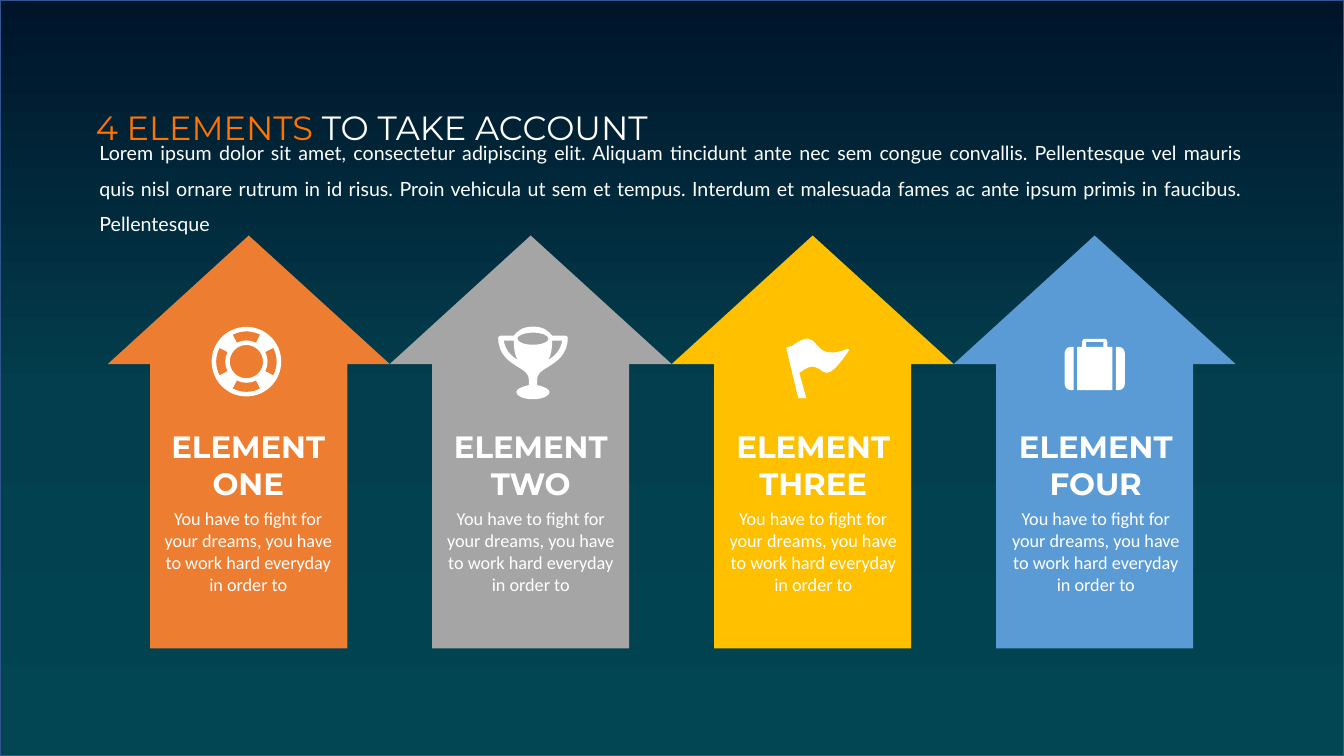
from copy import deepcopy
from dataclasses import dataclass
from math import cos, radians, sin, tan

from pptx import Presentation
from pptx.dml.color import RGBColor
from pptx.enum.shapes import MSO_SHAPE as Preset
from pptx.enum.text import MSO_ANCHOR as Anchor, MSO_AUTO_SIZE as AutoSize, PP_ALIGN as Align
from pptx.oxml.ns import qn
from pptx.util import Pt

NIGHT, TEAL, DEEP_TEAL = (RGBColor.from_string(c) for c in ("00142A", "023E4D", "024654"))
FRAME = RGBColor(0x32, 0x54, 0x91)
WHITE = RGBColor(0xFF, 0xFF, 0xFF)
ACCENT = RGBColor(0xFF, 0x73, 0x00)
ORANGE = RGBColor(0xED, 0x7D, 0x31)
GRAY = RGBColor(0xA5, 0xA5, 0xA5)
GOLD = RGBColor(0xFF, 0xC0, 0x00)
BLUE = RGBColor(0x5B, 0x9B, 0xD5)

WIDTH, HEIGHT = 960, 540
ARROW_PITCH, TEXT_PITCH = 201.4, 201.8
ICON_UNIT = 0.72  # icons are drawn in hundredths of an inch

# A step is a point (x, y) or a cubic curve (x1, y1, x2, y2, x, y)
Step = tuple[float, ...]
Outline = list[Step]


@dataclass(frozen=True)
class Element:
    name: str
    color: RGBColor
    icon_left: float
    icon_top: float
    icon: list[Outline]


@dataclass(frozen=True)
class Span:
    text: str
    font: str
    size: float
    color: RGBColor = WHITE
    bold: bool = False


# Outline geometry
def flip(step: Step) -> Step:
    return tuple(-v if i % 2 == 0 else v for i, v in enumerate(step))


def mirror(outline: Outline) -> Outline:
    """Reflect an outline in the vertical axis and run it backwards."""
    result = [flip(outline[-1][-2:])]
    for step, before in zip(outline[:0:-1], outline[-2::-1]):
        controls = step[2:4] + step[:2] if len(step) == 6 else ()
        result.append(flip(controls + before[-2:]))
    return result


def arc(rx: float, ry: float, start: int, end: int, cy: float = 0) -> Outline:
    count = max(1, abs(end - start) // 90)
    turn = radians(end - start) / count
    pull = 4 / 3 * tan(turn / 4)
    outline: Outline = [(rx * cos(radians(start)), cy + ry * sin(radians(start)))]
    for i in range(count):
        a = radians(start) + i * turn
        b = a + turn
        outline.append((rx * (cos(a) - pull * sin(a)), cy + ry * (sin(a) + pull * cos(a)),
                        rx * (cos(b) + pull * sin(b)), cy + ry * (sin(b) - pull * cos(b)),
                        rx * cos(b), cy + ry * sin(b)))
    return outline


def lifebuoy() -> list[Outline]:
    gaps = [arc(30, 30, mid - 27, mid + 27) + arc(21, 21, mid + 27, mid - 27)
            for mid in range(0, 360, 90)]
    return [arc(34.5, 34.5, 0, 360), arc(16.5, 16.5, 360, 0), *gaps]


def trophy() -> list[Outline]:
    half = [(0, 0), (11, 0, 16, 5, 19, 9), (32, 9), (33, 9, 34.5, 10, 34.5, 11),
            (34.5, 28, 23, 35, 15, 40), (8, 44, 4, 47, 4, 53), (4, 58),
            (12, 60, 16.5, 62, 16.5, 65), (16.5, 69, 9, 72, 0, 72)]
    handle = [(15, 33), (18, 29, 19, 22, 19, 14), (29, 14), (27, 24, 22, 29, 15, 33)]
    return [half + mirror(half)[1:], handle, mirror(handle), arc(15.5, 6, 360, 0, 12)]


def flag() -> list[Outline]:
    return [[(61, 26), (21, 42, 37, 0, 6, 23), (0, 25), (12, 75), (20, 75), (13, 50),
             (41, 28, 30, 75, 62, 28), (64, 28, 62, 26, 61, 26)]]


def suitcase() -> list[Outline]:
    end = [(21, 51), (23, 51), (28, 51, 30, 48, 30, 43), (30, 16), (30, 11, 28, 8, 23, 8), (21, 8)]
    half = [(0, 0), (10, 0), (11, 0, 12.5, 1, 12.5, 3), (12.5, 8), (17.5, 8), (17.5, 51), (0, 51)]
    opening = [(-8.5, 3), (-8.5, 8), (8.5, 8), (8.5, 3)]
    return [end, mirror(end), half + mirror(half)[1:], opening]


# Drawing helpers
def paint(shape, color: RGBColor) -> None:
    shape.shadow.inherit = False
    shape.fill.solid()
    shape.fill.fore_color.rgb = color
    shape.line.fill.background()


def bend(shape, steps: list[Step]) -> None:
    """Join the three line segments of every curve step into one cubic curve."""
    segments = iter(shape.element.findall(".//" + qn("a:lnTo")))
    for step in steps:
        group = [next(segments) for _ in range(len(step) // 2)]
        if len(group) == 3:
            curve = group[0].makeelement(qn("a:cubicBezTo"), {})
            group[0].addprevious(curve)
            for segment in group:
                curve.append(segment[0])
                segment.getparent().remove(segment)


def draw_icon(page, element: Element) -> None:
    def place(step: Step) -> list[tuple[int, int]]:
        return [(Pt(element.icon_left + x * ICON_UNIT), Pt(element.icon_top + y * ICON_UNIT))
                for x, y in zip(step[::2], step[1::2])]

    builder = page.shapes.build_freeform(*place(element.icon[0][0])[0], scale=1.0)
    for i, outline in enumerate(element.icon):
        if i:
            builder.move_to(*place(outline[0])[0])
        builder.add_line_segments([p for step in outline[1:] for p in place(step)], close=True)
    icon = builder.convert_to_shape()
    bend(icon, [step for outline in element.icon for step in outline[1:]])
    paint(icon, WHITE)


def write(box, spans: list[Span], align: Align, spacing: float = 1.0, wrap: bool = True) -> None:
    frame = box.text_frame
    frame.word_wrap = wrap
    frame.auto_size = AutoSize.SHAPE_TO_FIT_TEXT
    para = frame.paragraphs[0]
    para.alignment = align
    para.line_spacing = spacing
    for span in spans:
        run = para.add_run()
        run.text = span.text
        run.font.name = span.font
        run.font.size = Pt(span.size)
        run.font.bold = span.bold
        run.font.color.rgb = span.color


def add_text(page, left: float, top: float, width: float, height: float,
             span: Span, align: Align, spacing: float = 1.0):
    box = page.shapes.add_textbox(Pt(left), Pt(top), Pt(width), Pt(height))
    write(box, [span], align, spacing)
    return box


def draw_backdrop(page) -> None:
    backdrop = page.shapes.add_shape(Preset.RECTANGLE, 0, 0, Pt(WIDTH), Pt(HEIGHT))
    backdrop.shadow.inherit = False
    backdrop.line.color.rgb = FRAME
    backdrop.line.width = Pt(1)
    backdrop.fill.gradient()
    backdrop.fill.gradient_angle = 270
    stop_list = backdrop.element.find(".//" + qn("a:gsLst"))
    stop_list.append(deepcopy(stop_list[-1]))
    shades = ((0, NIGHT), (0.52, TEAL), (1, DEEP_TEAL))
    for stop, (position, color) in zip(backdrop.fill.gradient_stops, shades):
        stop.position = position
        stop.color.rgb = color


def draw_element(page, index: int, element: Element) -> None:
    arrow = page.shapes.add_shape(Preset.UP_ARROW, Pt(77 + index * ARROW_PITCH), Pt(168.2),
                                  Pt(201.4), Pt(294.9))
    arrow.adjustments[0] = 0.699
    arrow.adjustments[1] = 0.456
    paint(arrow, element.color)
    draw_icon(page, element)
    left = 108.8 + index * TEXT_PITCH
    add_text(page, left, 302, 137, 60.5,
             Span(f"ELEMENT {element.name}", "Montserrat", 22, bold=True), Align.CENTER)
    add_text(page, left, 359, 137, 70.5, Span(PROMISE, "Calibri", 13), Align.CENTER)


PROMISE = "You have to fight for your dreams, you have to work hard everyday in order to"
INTRO = ("Lorem ipsum dolor sit amet, consectetur adipiscing elit. Aliquam tincidunt ante nec sem "
         "congue convallis. Pellentesque vel mauris quis nisl ornare rutrum in id risus. Proin "
         "vehicula ut sem et tempus. Interdum et malesuada fames ac ante ipsum primis in "
         "faucibus. Pellentesque")
ELEMENTS = [
    Element("ONE", ORANGE, 176, 258.3, lifebuoy()),
    Element("TWO", GRAY, 380.7, 233.3, trophy()),
    Element("THREE", GOLD, 561.6, 230.4, flag()),
    Element("FOUR", BLUE, 782, 242, suitcase()),
]


def main() -> None:
    deck = Presentation()
    deck.slide_width, deck.slide_height = Pt(WIDTH), Pt(HEIGHT)
    page = deck.slides.add_slide(deck.slide_layouts[5])
    draw_backdrop(page)

    # Introduction
    intro = add_text(page, 61.3, 101.7, 835.9, 57, Span(INTRO, "Lato", 14), Align.JUSTIFY, 1.5)
    frame = intro.text_frame
    frame.vertical_anchor = Anchor.MIDDLE
    frame.margin_left = frame.margin_right = Pt(9.7)
    frame.margin_top = frame.margin_bottom = Pt(5)

    # Arrows
    for index, element in enumerate(ELEMENTS):
        draw_element(page, index, element)

    # Title, brought in front of the backdrop
    title = page.shapes.title
    title.left, title.top, title.width, title.height = Pt(61.2), Pt(67), Pt(453.5), Pt(39.5)
    title.text_frame.vertical_anchor = Anchor.TOP
    write(title, [Span("4 ELEMENTS ", "Montserrat", 24, ACCENT),
                  Span("TO TAKE ACCOUNT", "Montserrat", 24)], Align.LEFT, 1.2, wrap=False)
    title.element.getparent().append(title.element)
    deck.save("out.pptx")


if __name__ == "__main__":
    main()
